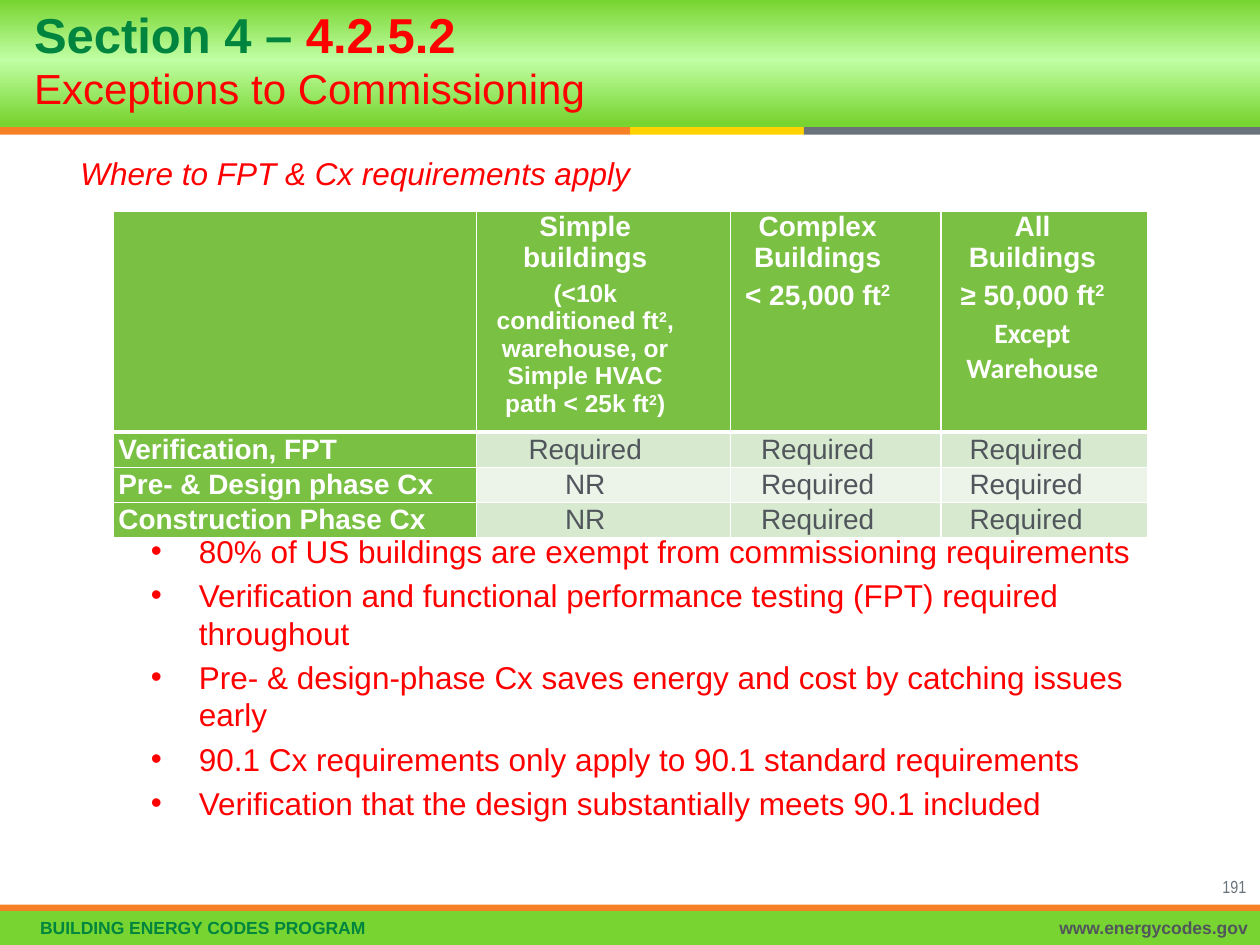
import copy
import lxml.etree
import pptx
import pptx.dml.color
import pptx.enum.shapes
import pptx.enum.text
import pptx.oxml.ns
import pptx.util

Inches = pptx.util.Inches
Pt = pptx.util.Pt
ALIGN = pptx.enum.text.PP_ALIGN
ANCHOR = pptx.enum.text.MSO_ANCHOR
qn = pptx.oxml.ns.qn


def color(value):
    return pptx.dml.color.RGBColor.from_string(value)


def write(paragraph, text, size=18, fill="FF0000", bold=False, italic=False,
          font="Arial", align=ALIGN.LEFT, before=0, spacing=None):
    paragraph.alignment = align
    paragraph.space_before = Pt(before)
    if spacing:
        paragraph.line_spacing = spacing
    for index, piece in enumerate(text.split("²")):
        for part, raised in (("2", True), (piece, False)) if index else ((piece, False),):
            if not part:
                continue
            run = paragraph.add_run()
            run.text = part
            run.font.size = Pt(size)
            run.font.name = font
            run.font.bold = bold
            run.font.italic = italic
            run.font.color.rgb = color(fill)
            if raised:
                run.font._element.set("baseline", "30000")


presentation = pptx.Presentation()
presentation.slide_width = Inches(10)
presentation.slide_height = Inches(7.5)
slide = presentation.slides.add_slide(presentation.slide_layouts[5])

bars = [
    (0, 0, 10, 1.01, None),
    (0, 7.23, 10, 0.27, "78D430"),
    (0, 1.01, 5, 0.06, "F58025"),
    (5, 1.01, 1.38, 0.06, "FFD200"),
    (6.38, 1.01, 3.62, 0.06, "6A737B"),
    (0, 7.18, 10, 0.05, "F58025"),
]
for left, top, width, height, fill in bars:
    shape = slide.shapes.add_shape(pptx.enum.shapes.MSO_SHAPE.RECTANGLE, Inches(left),
                                   Inches(top), Inches(width), Inches(height))
    shape.shadow.inherit = False
    shape.line.fill.background()
    if fill:
        shape.fill.solid()
        shape.fill.fore_color.rgb = color(fill)
    else:
        shape.fill.gradient()
        shape.fill.gradient_angle = 270
        stop_list = shape._element.spPr.find(qn("a:gradFill")).find(qn("a:gsLst"))
        stop_list.append(copy.deepcopy(stop_list[0]))
        stops = [(0, "78D430"), (0.47, "C0FFA4"), (0.97, "78D430")]
        for stop, (position, stop_fill) in zip(shape.fill.gradient_stops, stops):
            stop.position = position
            stop.color.rgb = color(stop_fill)

title = slide.shapes.title
title.left, title.top, title.width, title.height = Inches(0.17), 0, Inches(6.22), Inches(1.01)
title.text_frame.auto_size = pptx.enum.text.MSO_AUTO_SIZE.NONE
title.text_frame.vertical_anchor = ANCHOR.MIDDLE
paragraph = title.text_frame.paragraphs[0]
write(paragraph, "Section 4 – ", size=28, fill="00853F", bold=True, spacing=Pt(28))
write(paragraph, "4.2.5.2", size=28, bold=True)
paragraph.add_line_break()
write(paragraph, "Exceptions to Commissioning", size=24)
slide.shapes._spTree.append(title._element)

labels = [
    (0.22, 7.23, 7.82, 0.26, ANCHOR.MIDDLE, "BUILDING ENERGY CODES PROGRAM",
     dict(size=10, fill="00853F", bold=True)),
    (5.99, 7.23, 4.01, 0.26, ANCHOR.MIDDLE, "www.energycodes.gov",
     dict(size=10, fill="50565C", bold=True, align=ALIGN.RIGHT)),
    (9.28, 6.9, 0.71, 0.18, ANCHOR.TOP, "191",
     dict(size=10, fill="6A737B", font="Arial Narrow", align=ALIGN.RIGHT)),
    (0.54, 1.17, 7.94, 0.4, ANCHOR.TOP, "Where to FPT & Cx requirements apply",
     dict(italic=True)),
]
for left, top, width, height, anchor, text, style in labels:
    box = slide.shapes.add_textbox(Inches(left), Inches(top), Inches(width), Inches(height))
    box.text_frame.word_wrap = True
    box.text_frame.vertical_anchor = anchor
    write(box.text_frame.paragraphs[0], text, **style)

bullets = [
    "80% of US buildings are exempt from commissioning requirements",
    "Verification and functional performance testing (FPT) required throughout",
    "Pre- & design-phase Cx saves energy and cost by catching issues early",
    "90.1 Cx requirements only apply to 90.1 standard requirements",
    "Verification that the design substantially meets 90.1 included",
]
body = slide.shapes.add_textbox(Inches(1.1), Inches(4.17), Inches(8.33), Inches(2.81))
body.text_frame.word_wrap = True
for index, text in enumerate(bullets):
    paragraph = body.text_frame.add_paragraph() if index else body.text_frame.paragraphs[0]
    properties = paragraph._p.get_or_add_pPr()
    properties.set("marL", str(Inches(0.38)))
    properties.set("indent", str(Inches(-0.38)))
    lxml.etree.SubElement(properties, qn("a:buFont")).set("typeface", "Arial")
    lxml.etree.SubElement(properties, qn("a:buChar")).set("char", "•")
    write(paragraph, text, before=3.6 if index else 0)

rows = [
    [[],
     [("Simple buildings", 16, "Arial"),
      ("(<10k conditioned ft², warehouse, or Simple HVAC path < 25k ft²)", 14, "Arial")],
     [("Complex Buildings", 16, "Arial"), ("< 25,000 ft²", 16, "Arial")],
     [("All Buildings", 16, "Arial"), ("≥ 50,000 ft²", 16, "Arial"),
      ("Except Warehouse", 16, "Calibri")]],
]
for texts in [("Verification, FPT", "Required", "Required", "Required"),
              ("Pre- & Design phase Cx", "NR", "Required", "Required"),
              ("Construction Phase Cx", "NR", "Required", "Required")]:
    rows.append([[(text, 16, "Arial")] for text in texts])

table = slide.shapes.add_table(4, 4, Inches(0.9), Inches(1.68), Inches(8.21), Inches(2.44)).table
for column, width in zip(table.columns, (2.88, 2.02, 1.67, 1.64)):
    column.width = Inches(width)
for row, height in zip(table.rows, (1.6, 0.28, 0.28, 0.28)):
    row.height = Inches(height)

for row_index, row in enumerate(rows):
    for column_index, lines in enumerate(row):
        cell = table.cell(row_index, column_index)
        heading = row_index == 0 or column_index == 0
        cell.margin_left = cell.margin_right = Inches(0.04)
        cell.margin_top = cell.margin_bottom = 0
        cell.vertical_anchor = ANCHOR.MIDDLE if row_index else ANCHOR.TOP
        for side in ("L", "R", "T", "B"):
            thick = (row_index, side) in ((0, "B"), (1, "T"))
            border = lxml.etree.SubElement(cell._tc.get_or_add_tcPr(), qn("a:ln" + side))
            border.set("w", str(Pt(3 if thick else 1)))
            border_fill = lxml.etree.SubElement(border, qn("a:solidFill"))
            lxml.etree.SubElement(border_fill, qn("a:srgbClr")).set("val", "FFFFFF")
        cell.fill.solid()
        band = "D7E9CF" if row_index % 2 else "ECF4E9"
        cell.fill.fore_color.rgb = color("7AC143" if heading else band)
        for index, (text, size, font) in enumerate(lines):
            paragraph = cell.text_frame.add_paragraph() if index else cell.text_frame.paragraphs[0]
            if column_index:
                properties = paragraph._p.get_or_add_pPr()
                properties.set("marR", str(Inches(0.29)))
                if row_index == 0 and column_index == 3:
                    properties.set("marL", str(Inches(0.1)))
            write(paragraph, text, size=size, font=font, bold=heading,
                  fill="FFFFFF" if heading else "50565C", spacing=1.0,
                  align=ALIGN.CENTER if column_index else ALIGN.LEFT,
                  before=3.5 if index else 0)

presentation.save("out.pptx")
